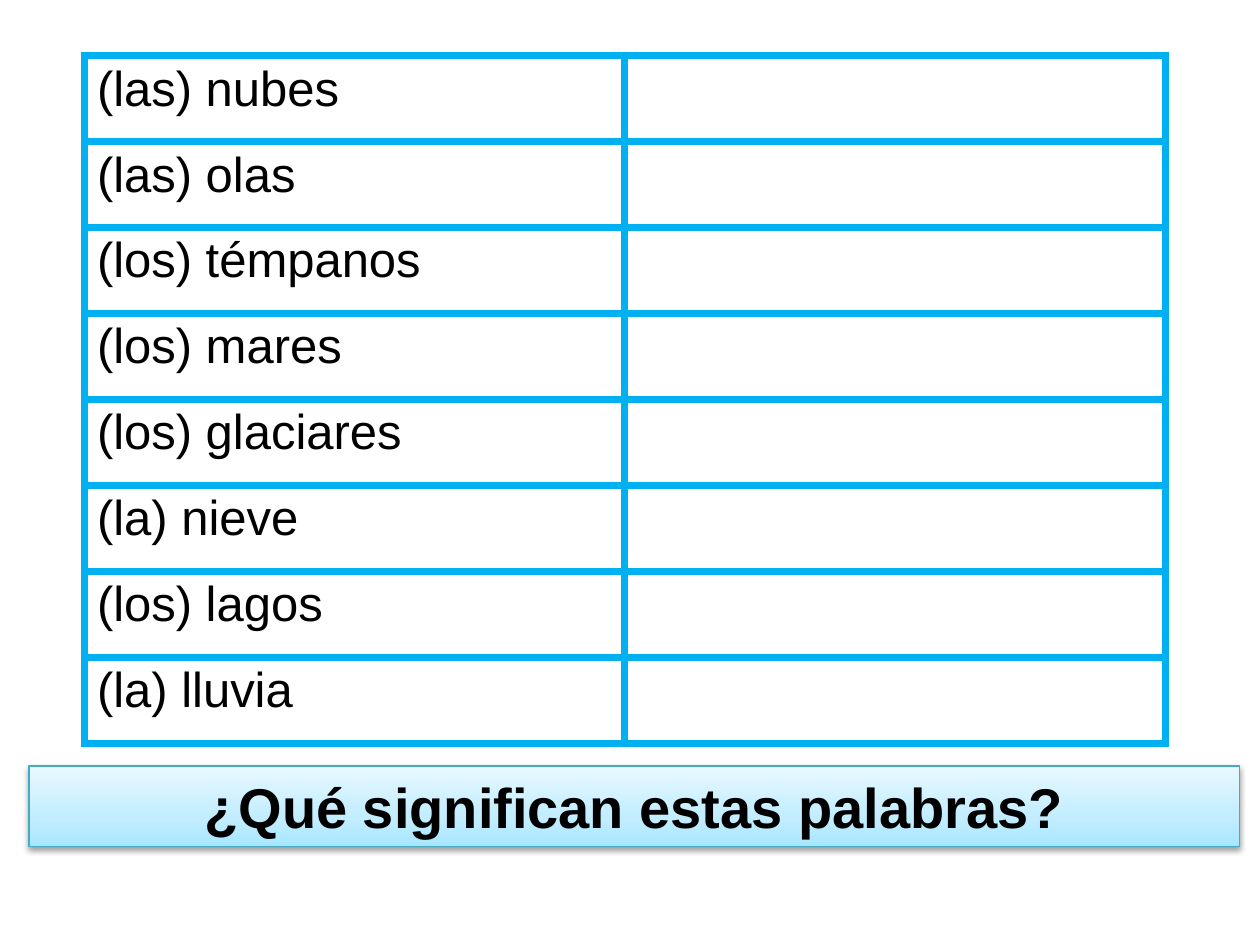
from lxml import etree
from pptx import Presentation
from pptx.dml.color import RGBColor
from pptx.enum.text import MSO_ANCHOR, PP_ALIGN
from pptx.oxml import parse_xml
from pptx.oxml.ns import nsdecls
from pptx.util import Inches, Pt

CENTER = PP_ALIGN.CENTER
MIDDLE = MSO_ANCHOR.MIDDLE
BLACK = RGBColor(0x00, 0x00, 0x00)
SKY = RGBColor(0x00, 0xB0, 0xF0)
TEAL = RGBColor(0x46, 0xAA, 0xC5)
BANNER_STOPS = (
    (0, RGBColor(0xA7, 0xE6, 0xFF)),
    (35, RGBColor(0xC1, 0xED, 0xFF)),
    (100, RGBColor(0xE7, 0xF8, 0xFF)),
)
TITLE_ONLY = 5
WORDS = (
    "(las) nubes", "(las) olas", "(los) témpanos", "(los) mares",
    "(los) glaciares", "(la) nieve", "(los) lagos", "(la) lluvia",
)


class VocabularyPage:
    """Style and current slide of a vocabulary exercise."""

    font = "Arial"
    title_size = Pt(32)
    word_size = Pt(28)
    rule_width = Pt(4.5)

    def __init__(self, deck):
        self.width, self.height = deck.slide_width, deck.slide_height
        self.page = deck.slides.add_slide(deck.slide_layouts[TITLE_ONLY])

    def area(self, left, top, width, height):
        return (int(left * self.width), int(top * self.height),
                int(width * self.width), int(height * self.height))

    def format_text(self, para, size, bold):
        for span in para.runs:
            span.font.name = self.font
            span.font.size = size
            span.font.bold = bold
            span.font.color.rgb = BLACK

    def title(self, text, share):
        box = self.page.shapes.title
        box.left, box.top, box.width, box.height = self.area(*share)
        frame = box.text_frame
        frame.text = text
        frame.word_wrap = True
        frame.vertical_anchor = MIDDLE
        para = frame.paragraphs[0]
        para.alignment = CENTER
        self.format_text(para, self.title_size, True)
        self.decorate(box)

    def decorate(self, box):
        stops = "".join(
            f'<a:gs pos="{place * 1000}"><a:srgbClr val="{color}"/></a:gs>'
            for place, color in BANNER_STOPS)
        properties = box._element.spPr
        properties.append(parse_xml(
            f'<a:gradFill {nsdecls("a")} rotWithShape="1"><a:gsLst>{stops}</a:gsLst>'
            '<a:lin ang="16200000" scaled="0"/></a:gradFill>'))
        box.line.color.rgb = TEAL
        box.line.width = Pt(0.75)
        properties.append(parse_xml(
            f'<a:effectLst {nsdecls("a")}><a:outerShdw blurRad="{Pt(3.1)}" '
            f'dist="{Pt(1.6)}" dir="5400000" rotWithShape="0">'
            f'<a:srgbClr val="{BLACK}"><a:alpha val="38000"/></a:srgbClr>'
            '</a:outerShdw></a:effectLst>'))

    def rule_cell(self, cell):
        properties = cell._tc.get_or_add_tcPr()
        for side in ("lnL", "lnR", "lnT", "lnB"):
            etree.SubElement(properties, f"{{{properties.nsmap['a']}}}{side}",
                             w=str(self.rule_width)).append(parse_xml(
                f'<a:solidFill {nsdecls("a")}><a:srgbClr val="{SKY}"/></a:solidFill>'))
        cell.fill.background()

    def word_table(self, words, share):
        table = self.page.shapes.add_table(len(words), 2, *self.area(*share)).table
        table.first_row = False
        table.horz_banding = False
        for row, word in enumerate(words):
            table.cell(row, 0).text = word
            self.format_text(table.cell(row, 0).text_frame.paragraphs[0],
                             self.word_size, False)
        for cell in table.iter_cells():
            self.rule_cell(cell)


def main():
    deck = Presentation()
    deck.slide_width, deck.slide_height = Inches(10), Inches(7.5)
    page = VocabularyPage(deck)
    page.title("¿Qué significan estas palabras?", (0.023, 6.08 / 7.5, 0.961, 0.64 / 7.5))
    page.word_table(WORDS, (0.067, 0.44 / 7.5, 0.858, 5.46 / 7.5))
    deck.save("out.pptx")


if __name__ == "__main__":
    main()
